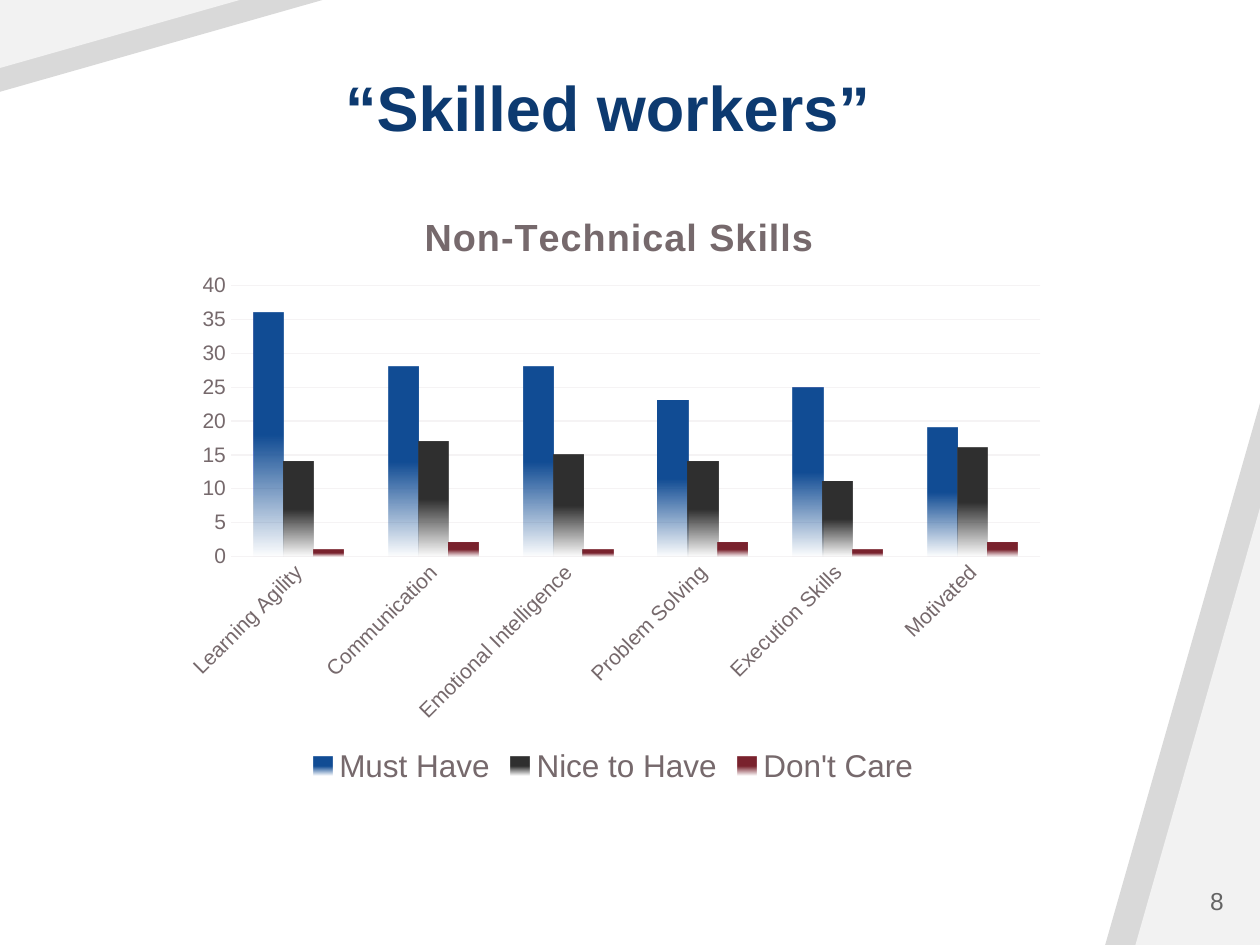
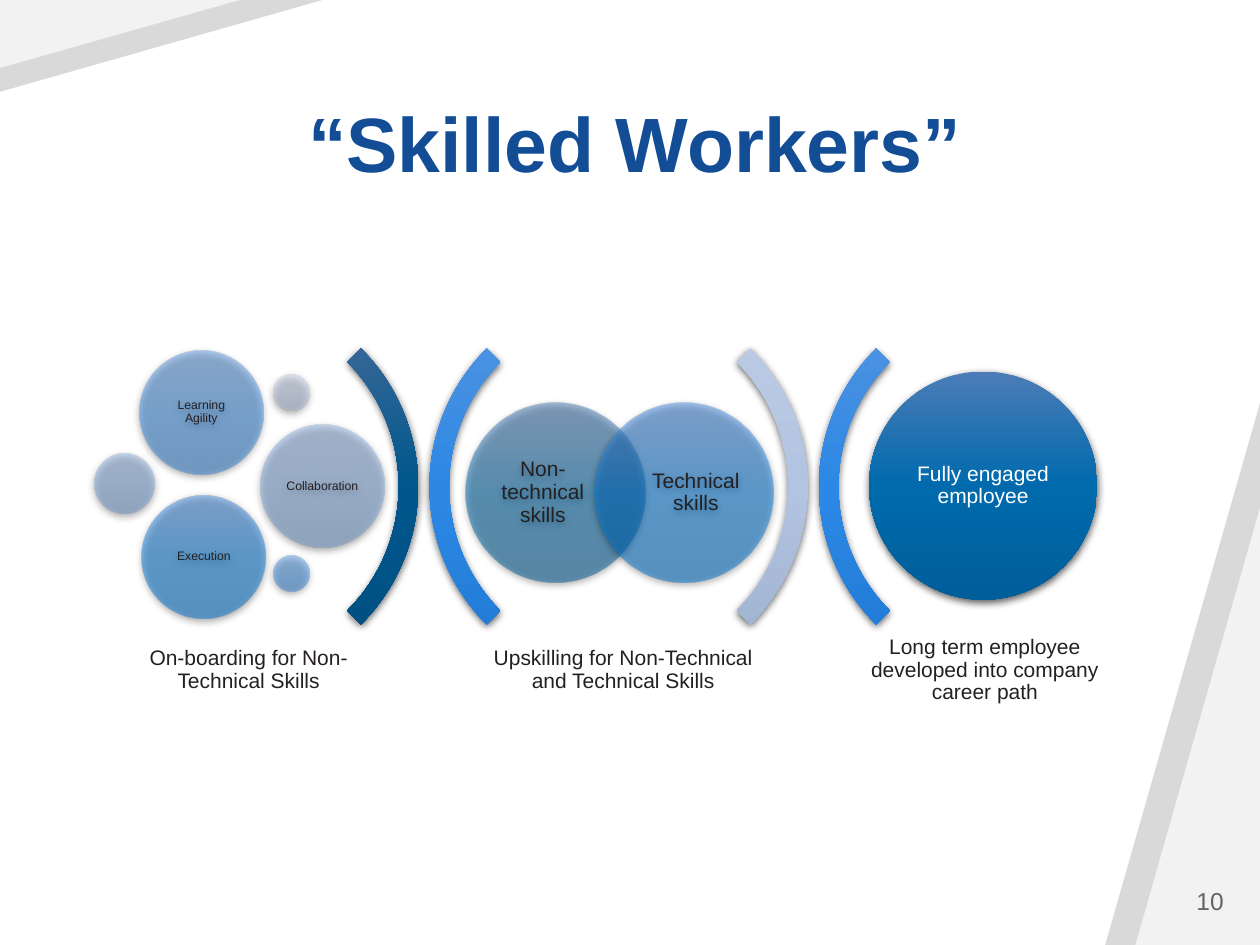
"""Build two slides on skilled workers: a skills chart and a development path."""
from lxml import etree
from pptx import Presentation
from pptx import util as u
from pptx.chart import data
from pptx.dml.color import RGBColor
from pptx.enum import chart as ch, shapes, text
from pptx.oxml import ns, parse_xml

FONT = "Arial"
WIDTH, HEIGHT = 25.4, 19.05
COLORS = {
    "navy": "0D3A70", "blue": "124D95", "charcoal": "303030", "wine": "7A232E",
    "ink": "242021", "label": "76696C", "number": "646464", "grid": "F5F3F4",
    "band": "D9D9D9", "corner": "F2F2F2", "white": "FFFFFF", "shadow": "000000",
}
GRADIENTS = {
    "deep": ("4B6D9A", "00578D", "004D7E"),
    "bright": ("5895E1", "2C88E4", "1E79D4"),
    "pale": ("BECDE4", "B2C4E1", "9BAECB"),
    "ocean": ("4B7CB7", "006AAD", "005E9A"),
    "azure": ("4C8EE1", "0880E2", "0073D0"),
    "sky": ("639EE3", "4092E6", "3081D5"),
    "mist": ("95B5E1", "82ABE0", "6E97CC"),
    "haze": ("C6D2E7", "BACAE4", "A2B2CD"),
}
CORNERS = [
    ("band", 3.12, 10.92, 6.5, 1.85),
    ("corner", 2.51, 8.81, 4.83, 1.37),
]

CHART_TITLE = "Non-Technical Skills"
SKILLS = ["Learning Agility", "Communication", "Emotional Intelligence",
          "Problem Solving", "Execution Skills", "Motivated"]
RATINGS = [
    ("Must Have", "blue", (36, 28, 28, 23, 25, 19)),
    ("Nice to Have", "charcoal", (14, 17, 15, 14, 11, 16)),
    ("Don't Care", "wine", (1, 2, 1, 2, 1, 2)),
]

ARC_TOP, ARC_SIZE, ARC_PITCH = 5.87, 7.87, 7.85
ARCS = [
    (0.56, 0, 90, "deep"),
    (8.66, 0, 270, "bright"),
    (0.56, 1, 90, "pale"),
    (8.66, 1, 270, "bright"),
]
CIRCLES = [
    (11.2, 9.93, 3.61, "ocean", 50, "Non-technical skills", 12, "ink", (0, 0.51)),
    (13.79, 9.93, 3.61, "azure", 50, "Technical skills", 12, "ink", (0.48, 0)),
    (4.06, 8.31, 2.49, "sky", 50, "Learning Agility", 7, "ink", (0.08, 0.08)),
    (2.51, 9.75, 1.22, "mist", 50, "", 7, "ink", (0, 0)),
    (5.87, 7.92, 0.72, "haze", 50, "", 7, "ink", (0, 0)),
    (6.5, 9.8, 2.49, "mist", 50, "Collaboration", 7, "ink", (0.08, 0.08)),
    (5.87, 11.56, 0.72, "sky", 50, "", 7, "ink", (0, 0)),
    (4.11, 11.23, 2.49, "azure", 50, "Execution", 7, "ink", (0.08, 0.08)),
    (19.82, 9.79, 4.6, "ocean", 100, "Fully engaged employee", 12, "white", (0.13, 0.13)),
]
CAPTIONS = [
    (2.03, "On-boarding for Non-Technical Skills"),
    (9.58, "Upskilling for Non-Technical and Technical Skills"),
    (16.87, "Long term employee developed into company career path"),
]


def rgb(name):
    return RGBColor.from_string(COLORS[name])


def box(*lengths):
    return [u.Cm(n) for n in lengths]


def set_all(target, **values):
    for name, value in values.items():
        setattr(target, name, value)


def set_font(font, size, color, bold=False):
    set_all(font, name=FONT, size=u.Pt(size), bold=bold)
    font.color.rgb = rgb(color)


def write(shape, words, size, color, bold=False, align="CENTER",
          anchor="MIDDLE", spacing=0.9, insets=(0.25, 0.25), pad=0.13):
    tf = shape.text_frame
    left, right = insets
    set_all(tf, text=words, word_wrap=True, auto_size=text.MSO_AUTO_SIZE.NONE,
            vertical_anchor=text.MSO_ANCHOR[anchor],
            margin_left=u.Cm(left), margin_right=u.Cm(right),
            margin_top=u.Cm(pad), margin_bottom=u.Cm(pad))
    p = tf.paragraphs[0]
    set_all(p, alignment=text.PP_ALIGN[align], line_spacing=spacing)
    for r in p.runs:
        set_font(r.font, size, color, bold)


def fill_gradient(fill, sp_pr, stops):
    fill.background()
    marks = "".join(
        f'<a:gs pos="{pos * 1000}"><a:srgbClr val="{color}">'
        f'<a:alpha val="{alpha * 1000}"/></a:srgbClr></a:gs>'
        for pos, color, alpha in stops)
    grad = parse_xml(
        f'<a:gradFill {ns.nsdecls("a")} rotWithShape="0"><a:gsLst>{marks}</a:gsLst>'
        '<a:lin ang="5400000" scaled="0"/></a:gradFill>')
    sp_pr.replace(sp_pr.find(ns.qn("a:noFill")), grad)


def add_plain(s, kind, *frame):
    sp = s.shapes.add_shape(shapes.MSO_SHAPE[kind], *box(*frame))
    sp.shadow.inherit = False
    sp.line.fill.background()
    return sp


def add_glossy(s, kind, frame, gradient, alpha=100):
    sp = add_plain(s, kind, *frame)
    sp_pr = sp._element.spPr
    stops = [(pos, c, alpha) for pos, c in zip((0, 50, 100), GRADIENTS[gradient])]
    fill_gradient(sp.fill, sp_pr, stops)
    shadow = etree.SubElement(
        sp_pr.find(ns.qn("a:effectLst")), ns.qn("a:outerShdw"),
        blurRad="57150", dist="19050", dir="5400000", rotWithShape="0")
    color = etree.SubElement(shadow, ns.qn("a:srgbClr"), val=COLORS["shadow"])
    etree.SubElement(color, ns.qn("a:alpha"), val="63000")
    return sp


def add_base(prs, title, number, size, color, width, height):
    s = prs.slides.add_slide(prs.slide_layouts[5])
    for shade, w, h, top_w, top_h in CORNERS:
        for frame, turn in (((WIDTH - w, HEIGHT - h, w, h), 0),
                            ((0, 0, top_w, top_h), 180)):
            sp = add_plain(s, "ISOSCELES_TRIANGLE", *frame)
            sp.adjustments[0] = 1
            sp.rotation = turn
            sp.fill.solid()
            sp.fill.fore_color.rgb = rgb(shade)
    left, top, w, h = box(1.75, 1.02, width, height)
    set_all(s.shapes.title, left=left, top=top, width=w, height=h)
    write(s.shapes.title, title, size, color, bold=True, anchor="BOTTOM")
    write(s.shapes.add_textbox(*box(21.36, 17.65, 3.56, 1.02)), number, 14, "number",
          align="RIGHT", spacing=1)
    return s


def place(parent, index, **values):
    old = parent.find(ns.qn("c:layout"))
    if old is not None:
        parent.remove(old)
    layout = etree.Element(ns.qn("c:layout"))
    manual = etree.SubElement(layout, ns.qn("c:manualLayout"))
    for name, value in values.items():
        etree.SubElement(manual, ns.qn(f"c:{name}"), val=str(value))
    parent.insert(index, layout)


def add_skills_chart(s):
    cd = data.CategoryChartData(number_format="0")
    cd.categories = SKILLS
    for name, _, values in RATINGS:
        cd.add_series(name, values)
    chart = s.shapes.add_chart(ch.XL_CHART_TYPE.COLUMN_CLUSTERED,
                               *box(3.4, 3.53, 17.93, 12.4), cd).chart
    set_font(chart.font, 10, "ink")

    chart.has_title = True
    tf = chart.chart_title.text_frame
    tf.text = CHART_TITLE
    r = tf.paragraphs[0].runs[0]
    set_font(r.font, 21.6, "label", bold=True)
    r.font._element.set("spc", "50")
    place(chart.chart_title._element, 1, xMode="edge", yMode="edge", x=0.28, y=0.05)

    chart.has_legend = True
    set_all(chart.legend, position=ch.XL_LEGEND_POSITION.BOTTOM, include_in_layout=False)
    set_font(chart.legend.font, 18, "label")

    for axis in (chart.category_axis, chart.value_axis):
        set_all(axis, major_tick_mark=ch.XL_TICK_MARK.NONE,
                minor_tick_mark=ch.XL_TICK_MARK.NONE)
        axis.format.line.fill.background()
        set_font(axis.tick_labels.font, 12, "label")
    labels = chart.category_axis._element.find(ns.qn("c:txPr"))
    labels.find(ns.qn("a:bodyPr")).set("rot", "-2700000")
    set_all(chart.value_axis, minimum_scale=0, maximum_scale=40, major_unit=5)
    set_all(chart.value_axis.tick_labels, number_format="0", number_format_is_linked=False)
    grid = chart.value_axis.major_gridlines.format.line
    grid.width = u.Pt(0.75)
    grid.color.rgb = rgb("grid")

    plot = chart.plots[0]
    set_all(plot, gap_width=150, overlap=0, vary_by_categories=False)
    for series, (_, color, _) in zip(plot.series, RATINGS):
        fill = series.format.fill
        stops = [(50, COLORS[color], 100), (100, COLORS[color], 0)]
        fill_gradient(fill, series._element.spPr, stops)
    place(plot._element.getparent(), 0, layoutTarget="inner", xMode="edge",
          yMode="edge", x=0.07, y=0.18, w=0.91, h=0.44)


def add_path(s):
    for left, step, turn, gradient in ARCS:
        frame = (left + step * ARC_PITCH, ARC_TOP, ARC_SIZE, ARC_SIZE)
        arc = add_glossy(s, "BLOCK_ARC", frame, gradient)
        arc.rotation = turn
        for i, value in enumerate((135, 189, 0.05)):
            arc.adjustments[i] = value
    for x, y, size, gradient, alpha, words, points, color, insets in CIRCLES:
        frame = (x - size / 2, y - size / 2, size, size)
        circle = add_glossy(s, "OVAL", frame, gradient, alpha)
        if words:
            write(circle, words, points, color, insets=insets, pad=0)
    for left, words in CAPTIONS:
        caption = s.shapes.add_textbox(*box(left, 12.73, 5.97, 1.57))
        write(caption, words, 12, "ink", insets=(0.13, 0.13))


def main():
    prs = Presentation()
    prs.slide_width, prs.slide_height = box(WIDTH, HEIGHT)
    add_skills_chart(add_base(prs, "“Skilled workers”", "8", 36, "navy", 21, 2.03))
    add_path(add_base(prs, "“Skilled Workers”", "10", 44, "blue", 22.1, 2.92))
    prs.save("out.pptx")


if __name__ == "__main__":
    main()
